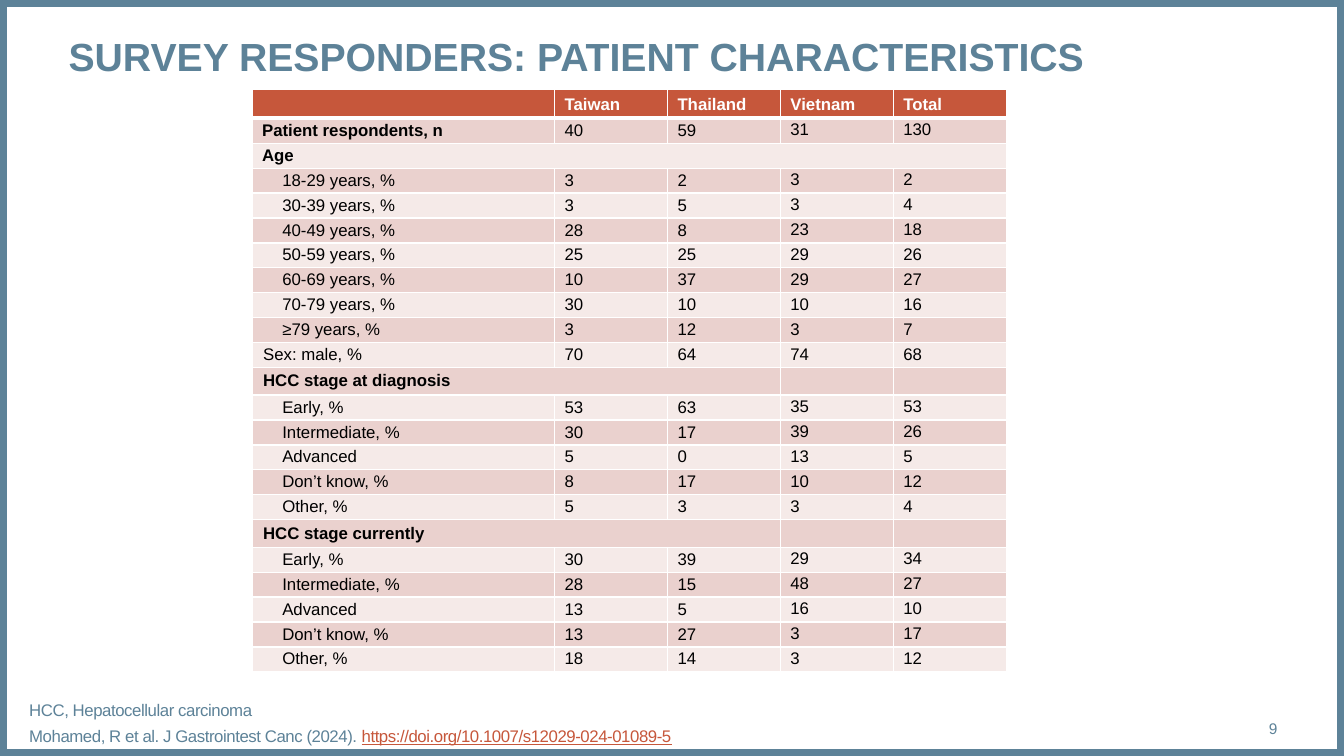
from lxml.etree import SubElement
from pptx import Presentation
from pptx.dml.color import RGBColor
from pptx.enum.shapes import MSO_SHAPE
from pptx.enum.text import MSO_ANCHOR, PP_ALIGN
from pptx.oxml.ns import qn
from pptx.util import Inches, Pt

THEME = {
    "font": "Arial", "slate": "5D8298", "rust": "C6573B", "white": "FFFFFF",
    "black": "000000", "bands": ("F5EAE8", "EAD1CE"),
    "title": 28, "body": 12, "number": 11,
}
HEADER = ("", "Taiwan", "Thailand", "Vietnam", "Total")
ROWS = [
    ("Patient respondents, n", 0, (40, 59, 31, 130)),
    ("Age", 0, ()),
    ("18-29 years, %", 0.2, (3, 2, 3, 2)),
    ("30-39 years, %", 0.2, (3, 5, 3, 4)),
    ("40-49 years, %", 0.2, (28, 8, 23, 18)),
    ("50-59 years, %", 0.2, (25, 25, 29, 26)),
    ("60-69 years, %", 0.2, (10, 37, 29, 27)),
    ("70-79 years, %", 0.2, (30, 10, 10, 16)),
    ("≥79 years, %", 0.2, (3, 12, 3, 7)),
    ("Sex: male, %", 0.01, (70, 64, 74, 68)),
    ("HCC stage at diagnosis", 0.01, ()),
    ("Early, %", 0.2, (53, 63, 35, 53)),
    ("Intermediate, %", 0.2, (30, 17, 39, 26)),
    ("Advanced", 0.2, (5, 0, 13, 5)),
    ("Don’t know, %", 0.2, (8, 17, 10, 12)),
    ("Other, %", 0.2, (5, 3, 3, 4)),
    ("HCC stage currently", 0.01, ()),
    ("Early, %", 0.2, (30, 39, 29, 34)),
    ("Intermediate, %", 0.2, (28, 15, 48, 27)),
    ("Advanced", 0.2, (13, 5, 16, 10)),
    ("Don’t know, %", 0.2, (13, 27, 3, 17)),
    ("Other, %", 0.2, (18, 14, 3, 12)),
]
SPANS = {"Age": 5, "HCC stage at diagnosis": 3, "HCC stage currently": 3}
HEADER_H, STAGE_H, TABLE_H = 0.28, 0.26, 5.75
ROW_H = (TABLE_H - HEADER_H - 2 * STAGE_H) / (len(ROWS) - 2)


def style(r, size, color, bold=False):
    r.font.name = THEME["font"]
    r.font.size = Pt(size)
    r.font.bold = bold
    r.font.color.rgb = RGBColor.from_string(color)


def add_text(left, top, width, height, lines, anchor):
    tf = s.shapes.add_textbox(*map(Inches, (left, top, width, height))).text_frame
    tf.word_wrap = True
    tf.margin_left = tf.margin_right = tf.margin_top = tf.margin_bottom = 0
    tf.vertical_anchor = anchor
    tf.text = lines
    return tf


prs = Presentation()
prs.slide_width, prs.slide_height = Inches(13.33), Inches(7.5)
s = prs.slides.add_slide(prs.slide_layouts[6])

frame = s.shapes.add_shape(MSO_SHAPE.RECTANGLE, 0, 0, prs.slide_width, prs.slide_height)
frame.shadow.inherit = False
frame.fill.background()
frame.line.color.rgb = RGBColor.from_string(THEME["slate"])
frame.line.width = Pt(10)

table = s.shapes.add_table(len(ROWS) + 1, len(HEADER), Inches(2.5), Inches(0.89),
                           Inches(7.48), Inches(TABLE_H)).table
table.horz_banding = False
for i, column in enumerate(table.columns):
    column.width = Inches(1.12 if i else 3)

for i, (label, indent, values) in enumerate([("", 0, HEADER[1:])] + ROWS):
    is_header = i == 0
    is_stage = SPANS.get(label) == 3
    table.rows[i].height = Inches(HEADER_H if is_header else STAGE_H if is_stage else ROW_H)
    fill = THEME["rust"] if is_header else THEME["bands"][i % 2]
    texts = [label, *map(str, values)] + [""] * (4 - len(values))
    for j, text in enumerate(texts):
        cell = table.cell(i, j)
        tc_pr = cell._tc.get_or_add_tcPr()
        for side in ("lnL", "lnR", "lnT", "lnB"):
            width = 3 if is_header and side == "lnB" else 1
            ln = SubElement(tc_pr, qn(f"a:{side}"), w=str(Pt(width)))
            SubElement(SubElement(ln, qn("a:solidFill")), qn("a:srgbClr"), val=THEME["white"])
        cell.fill.solid()
        cell.fill.fore_color.rgb = RGBColor.from_string(fill)
        cell.margin_left = cell.margin_right = Inches(0.1)
        cell.margin_top = Inches(0.05 if is_header else 0.04)
        cell.margin_bottom = Inches(0.03)
        cell.vertical_anchor = MSO_ANCHOR.TOP if is_header or j > 2 else MSO_ANCHOR.MIDDLE
        cell.text = text
        p = cell.text_frame.paragraphs[0]
        p.line_spacing = 1.0 if is_header else 0.9
        if j == 0:
            p._p.get_or_add_pPr().set("marL", str(Inches(indent)))
        bold = is_header or (j == 0 and (i == 1 or label in SPANS))
        for r in p.runs:
            style(r, THEME["body"], THEME["white"] if is_header else THEME["black"], bold)
        if not text:
            SubElement(p._p, qn("a:endParaRPr"), sz=str(THEME["body"] * 100))
    if label in SPANS:
        table.cell(i, 0).merge(table.cell(i, SPANS[label] - 1))

tf = add_text(0.68, 0.28, 11.99, 0.94, "SURVEY RESPONDERS: PATIENT CHARACTERISTICS", MSO_ANCHOR.TOP)
tf.margin_top = Inches(0.04)
style(tf.paragraphs[0].runs[0], THEME["title"], THEME["slate"], True)

tf = add_text(0.29, 6.92, 11.13, 0.5,
              "HCC, Hepatocellular carcinoma\nMohamed, R et al. J Gastrointest Canc (2024). ",
              MSO_ANCHOR.MIDDLE)
citation = tf.paragraphs[1]
citation.space_before = Pt(4)
doi = citation.add_run()
doi.text = "https://doi.org/10.1007/s12029-024-01089-5"
for p in tf.paragraphs:
    for r in p.runs:
        style(r, THEME["body"], THEME["slate"])
        r.font._element.set("spc", "-30")
doi.font.color.rgb = RGBColor.from_string(THEME["rust"])
doi.font.underline = True

tf = add_text(11.81, 7.03, 0.86, 0.4, "9", MSO_ANCHOR.MIDDLE)
tf.paragraphs[0].alignment = PP_ALIGN.RIGHT
style(tf.paragraphs[0].runs[0], THEME["number"], THEME["slate"])

prs.save("out.pptx")
